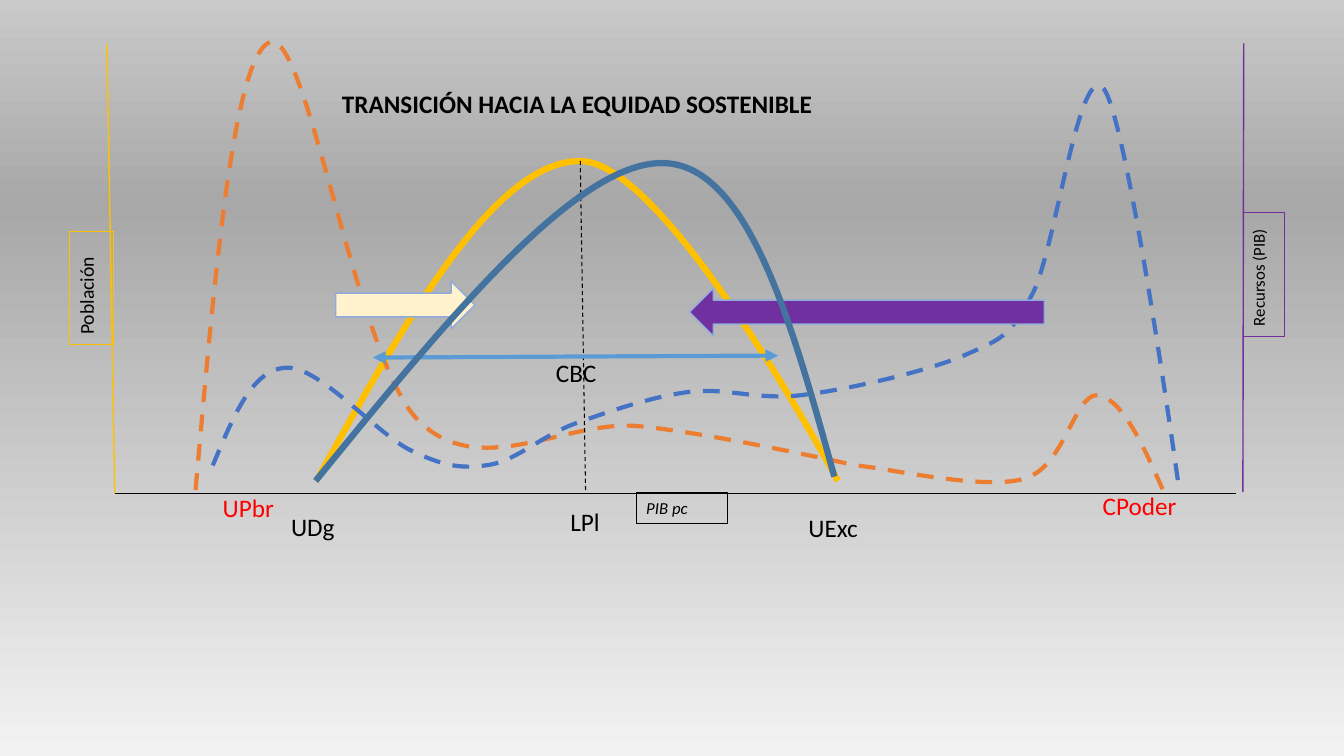
from copy import deepcopy
from dataclasses import dataclass

from lxml import etree
from pptx import Presentation
from pptx import util as u
from pptx.dml.color import RGBColor
from pptx.enum import dml, shapes, text
from pptx.oxml.ns import qn

Point = tuple[float, float]
GOLD, PURPLE, BLACK, RED = "FFC000", "7030A0", "000000", "FF0000"


@dataclass
class Curve:
    """A chain of cubic Béziers: a start, then two controls and an end for each."""
    color: str
    width: float
    points: list[Point]
    dashed: bool = False


@dataclass
class Line:
    start: Point
    end: Point
    color: str
    width: float = 1
    dashed: bool = False
    arrows: bool = False


@dataclass
class Arrow:
    left: float
    top: float
    width: float
    fill: str
    rotation: float = 0


@dataclass
class Label:
    words: str
    left: float
    top: float
    width: float
    height: float = 29
    size: float = 18
    color: str = BLACK
    border: str = ""
    border_width: float = 0.25
    vertical: bool = False
    italic: bool = False
    title: bool = False


EQUITY_POPULATION = Curve(GOLD, 4.5, [
    (226, 343.5), (289.5, 229), (353, 115), (414.5, 115),
    (476.5, 115), (598.5, 343.5), (598.5, 343.5)])
EQUITY_RESOURCES = Curve("43739E", 4.5, [
    (225.5, 343.5), (317.5, 230.5), (410.5, 116.5), (472.5, 116.5),
    (533.5, 116), (565, 228), (596, 340.5)])
CURRENT_POPULATION = Curve("ED7D31", 3, [
    (139.7, 350), (153.5, 194.5), (167, 39), (193, 30),
    (219.5, 21.5), (254, 253.5), (298, 299.5),
    (342, 345), (404.5, 299), (457, 304.5),
    (509, 309.5), (611.5, 332.5), (611.5, 332.5),
    (631.5, 334), (702.5, 350.5), (731.5, 342),
    (760.5, 334), (767.5, 281), (784, 282.3),
    (801.5, 284.5), (816.5, 318), (831.6, 352)], dashed=True)
CURRENT_RESOURCES = Curve("4472C4", 3, [
    (152, 332.5), (166.5, 298), (180, 264), (204, 262.7),
    (227.5, 260.5), (269.5, 310.5), (294, 322),
    (318, 333.5), (330.5, 335), (350, 332),
    (369.5, 328.5), (387.5, 311), (411, 302.5),
    (435, 294), (464.5, 283.5), (492, 280),
    (519, 276.5), (542, 286.5), (574.5, 282),
    (607, 278), (661, 265.5), (688.5, 254),
    (715, 242), (720.5, 242), (737.5, 210),
    (754, 178.5), (771, 41), (788.5, 63.5),
    (805.5, 85.5), (841.5, 344), (841.5, 344)], dashed=True)

LINES = [
    Line((414.5, 115), (418.3, 352), BLACK, 0.75, dashed=True),
    Line((82, 352.3), (882.7, 352.3), BLACK),
    Line((82, 352.3), (76.4, 31), GOLD),
    Line((887.8, 351.5), (888.4, 31), PURPLE),
    Line((266.4, 255.4), (555.8, 254), "5B9BD5", 3, arrows=True),
]
ARROWS = [
    Arrow(239.8, 200.9, 99.4, "FFF2CC"),
    Arrow(492.5, 205.9, 253.4, PURPLE, rotation=180),
]
LABELS = [
    Label("UDg", 200.8, 361.6, 56),
    Label("UExc", 570.4, 362.3, 67),
    Label("LPl", 400.3, 358, 56),
    Label("CBC", 390, 252, 56),
    Label("UPbr", 152, 348, 56, color=RED),
    Label("CPoder", 780.5, 346.5, 85, color=RED),
    Label("TRANSICIÓN HACIA LA EQUIDAD SOSTENIBLE", 150.5, 62.8, 523.5, 24.5, title=True),
    Label("Población", 49.5, 165.6, 31.5, 80.6, 14, border=GOLD, border_width=0.75,
          vertical=True),
    Label("Recursos (PIB)", 888, 151.4, 29, 88.6, 12, border=PURPLE, vertical=True),
    Label("PIB pc", 454.5, 351.7, 65, 21.8, 12, border=BLACK, italic=True),
]


def rgb(color: str) -> RGBColor:
    return RGBColor.from_string(color)


def style_line(line, color: str, width: float, dashed: bool = False) -> None:
    line.color.rgb = rgb(color)
    line.width = u.Pt(width)
    if dashed:
        line.dash_style = dml.MSO_LINE.DASH


def paint_background(page) -> None:
    fill = page.background.fill
    fill.gradient()
    fill.gradient_angle = 90
    stop_list = page.element.find(".//" + qn("a:gsLst"))
    stop_list.append(deepcopy(stop_list[-1]))
    stops = [(0, "F2F2F2"), (0.73, "A8A8A8"), (1, "C9C9C9")]
    for stop, (position, color) in zip(fill.gradient_stops, stops):
        stop.position = position
        stop.color.rgb = rgb(color)


def draw_curve(page, curve: Curve) -> None:
    """Join the nodes with straight segments, then bend each into a cubic Bézier."""
    points = [(u.Pt(x), u.Pt(y)) for x, y in curve.points]
    builder = page.shapes.build_freeform(*points[0])
    builder.add_line_segments(points[3::3], close=False)
    shape = builder.convert_to_shape()
    segments = list(shape.element.iter(qn("a:lnTo")))
    for index, segment in enumerate(segments):
        segment_start = 3 * index + 1
        bend = etree.Element(qn("a:cubicBezTo"))
        for x, y in points[segment_start:segment_start + 3]:
            etree.SubElement(bend, qn("a:pt"), x=str(x - shape.left), y=str(y - shape.top))
        segment.getparent().replace(segment, bend)
    shape.shadow.inherit = False
    shape.fill.background()
    style_line(shape.line, curve.color, curve.width, curve.dashed)


def draw_line(page, line: Line) -> None:
    ends = [u.Pt(value) for value in line.start + line.end]
    connector = page.shapes.add_connector(shapes.MSO_CONNECTOR.STRAIGHT, *ends)
    style_line(connector.line, line.color, line.width, line.dashed)
    properties = connector.element.spPr
    if line.arrows:
        outline = properties.find(qn("a:ln"))
        for tag in ("a:headEnd", "a:tailEnd"):
            etree.SubElement(outline, qn(tag), type="triangle")
    etree.SubElement(properties, qn("a:effectLst"))


def draw_arrow(page, arrow: Arrow) -> None:
    shape = page.shapes.add_shape(shapes.MSO_SHAPE.RIGHT_ARROW, u.Pt(arrow.left),
                                  u.Pt(arrow.top), u.Pt(arrow.width), u.Pt(34))
    shape.shadow.inherit = False
    shape.rotation = arrow.rotation
    shape.fill.solid()
    shape.fill.fore_color.rgb = rgb(arrow.fill)
    style_line(shape.line, "8FAADC", 1)


def draw_label(page, label: Label) -> None:
    box = page.shapes.add_textbox(u.Pt(label.left), u.Pt(label.top),
                                  u.Pt(label.width), u.Pt(label.height))
    if label.border:
        style_line(box.line, label.border, label.border_width)
    frame = box.text_frame
    frame.text = label.words
    frame.word_wrap = True
    para = frame.paragraphs[0]
    if label.title:
        frame.vertical_anchor = text.MSO_ANCHOR.MIDDLE
        para.alignment = text.PP_ALIGN.CENTER
        para.line_spacing = 0.9
    else:
        frame.auto_size = text.MSO_AUTO_SIZE.SHAPE_TO_FIT_TEXT
    if label.vertical:
        box.element.txBody.find(qn("a:bodyPr")).set("vert", "vert270")
    font = para.runs[0].font
    font.name = "Calibri"
    font.size = u.Pt(label.size)
    font.color.rgb = rgb(label.color)
    font.bold = label.title
    font.italic = label.italic


def main() -> None:
    deck = Presentation()
    deck.slide_width, deck.slide_height = u.Pt(960), u.Pt(540)
    page = deck.slides.add_slide(deck.slide_layouts[6])
    paint_background(page)
    for curve in (EQUITY_POPULATION, CURRENT_POPULATION, CURRENT_RESOURCES):
        draw_curve(page, curve)
    for line in LINES:
        draw_line(page, line)
    for arrow in ARROWS:
        draw_arrow(page, arrow)
    for label in LABELS:
        draw_label(page, label)
    draw_curve(page, EQUITY_RESOURCES)
    deck.save("out.pptx")


if __name__ == "__main__":
    main()
